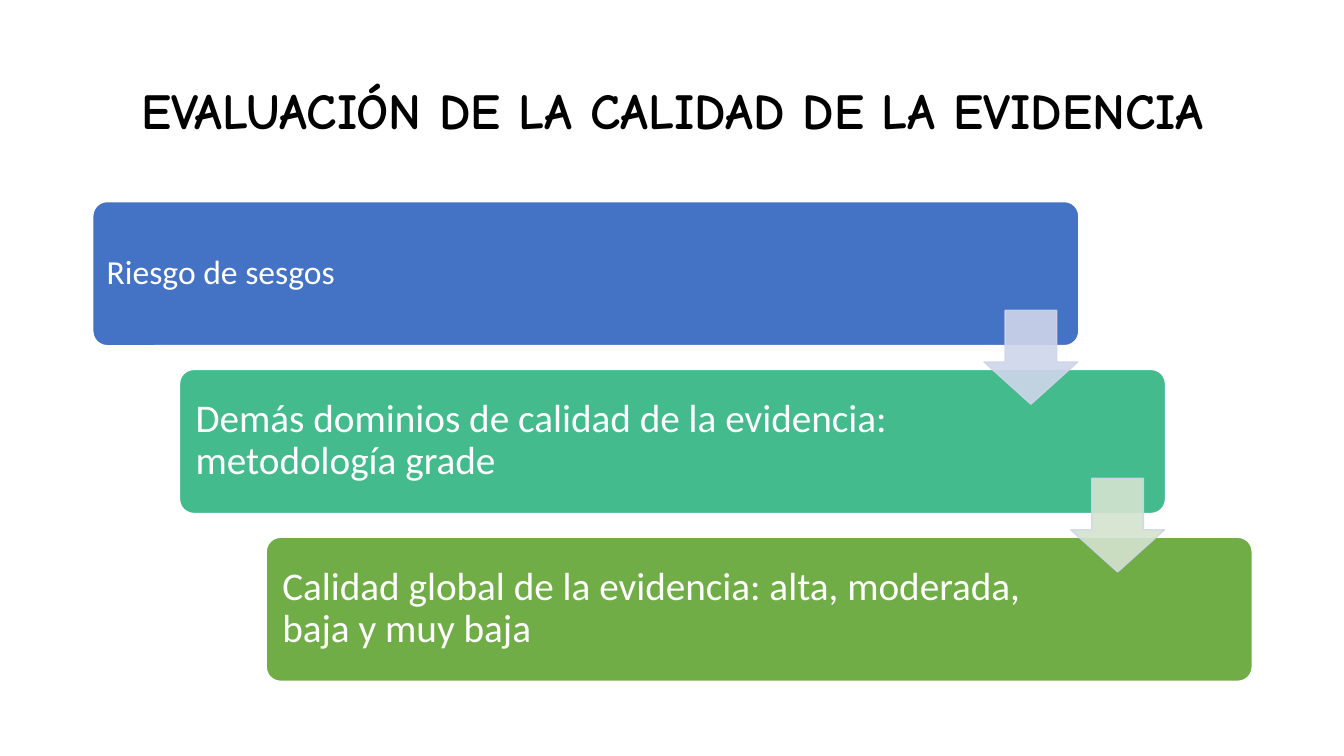
from dataclasses import dataclass

from lxml import etree
from pptx import Presentation
from pptx.dml.color import RGBColor
from pptx.dml.fill import FillFormat
from pptx.enum.shapes import MSO_SHAPE
from pptx.enum.text import MSO_ANCHOR, MSO_AUTO_SIZE, PP_ALIGN
from pptx.oxml.ns import qn
from pptx.shapes.autoshape import Shape
from pptx.shapes.shapetree import GroupShapes
from pptx.text.text import TextFrame
from pptx.util import Inches, Pt

ROUNDED = MSO_SHAPE.ROUNDED_RECTANGLE
DOWN_ARROW = MSO_SHAPE.DOWN_ARROW
MIDDLE = MSO_ANCHOR.MIDDLE
CENTER, LEFT = PP_ALIGN.CENTER, PP_ALIGN.LEFT

COLORS = {
    "black": "000000",
    "white": "FFFFFF",
    "blue": "4472C4",
    "teal": "43BB8D",
    "green": "70AD47",
    "pale_blue": "CFD5EA",
    "pale_green": "D5E3CF",
}

# Staircase grid, in inches
FIRST_LEFT, FIRST_TOP = 0.92, 2.0
COLUMN_STEP, ROW_STEP = 0.86, 3.33 / 2
BOX_WIDTH, BOX_HEIGHT = 9.78, 1.43
TEXT_OFFSET, TEXT_HEIGHT = 0.04, 1.34
ARROW_RIGHT, ARROW_DOWN, ARROW_SIZE = 8.84, 1.08, 0.93
ARROW_OPACITY = 90


@dataclass(frozen=True)
class Step:
    text: str
    color: str
    size: int
    text_width: float
    inset: float


STEPS = [
    Step("Riesgo de sesgos", "blue", 24, 8.23, 0.1),
    Step("Demás dominios de calidad de la evidencia: metodología grade",
         "teal", 28, 7.9, 0.12),
    Step("Calidad global de la evidencia: alta, moderada, baja y muy baja",
         "green", 28, 7.9, 0.12),
]
ARROW_COLORS = ["pale_blue", "pale_green"]


def rgb(name: str) -> RGBColor:
    return RGBColor.from_string(COLORS[name])


def write(frame: TextFrame, text: str, font: str, size: int, color: str,
          alignment: PP_ALIGN, bold: bool = False) -> None:
    frame.text = text
    frame.word_wrap = True
    frame.auto_size = MSO_AUTO_SIZE.NONE
    frame.vertical_anchor = MIDDLE
    paragraph = frame.paragraphs[0]
    paragraph.alignment = alignment
    paragraph.line_spacing = 0.9
    run_font = paragraph.runs[0].font
    run_font.name = font
    run_font.size = Pt(size)
    run_font.bold = bold
    run_font.color.rgb = rgb(color)


def set_opacity(fill: FillFormat, percent: int) -> None:
    color = fill._xPr.find(qn("a:solidFill"))[0]
    etree.SubElement(color, qn("a:alpha")).set("val", str(percent * 1000))


def add_figure(shapes: GroupShapes, kind: MSO_SHAPE, left: float, top: float,
               width: float, height: float, adjustments: list[float],
               fill: str, line: str) -> Shape:
    shape = shapes.add_shape(kind, Inches(left), Inches(top),
                             Inches(width), Inches(height))
    shape.shadow.inherit = False
    for index, value in enumerate(adjustments):
        shape.adjustments[index] = value
    shape.fill.solid()
    shape.fill.fore_color.rgb = rgb(fill)
    shape.line.color.rgb = rgb(line)
    shape.line.width = Pt(1)
    return shape


def add_step(shapes: GroupShapes, step: Step, left: float, top: float) -> None:
    add_figure(shapes, ROUNDED, left, top, BOX_WIDTH, BOX_HEIGHT, [0.1],
               step.color, "white")
    label = shapes.add_textbox(
        Inches(left + TEXT_OFFSET), Inches(top + TEXT_OFFSET),
        Inches(step.text_width), Inches(TEXT_HEIGHT))
    frame = label.text_frame
    frame.margin_left = frame.margin_right = Inches(step.inset)
    frame.margin_top = frame.margin_bottom = Inches(step.inset)
    write(frame, step.text, "Calibri", step.size, "white", LEFT)


def add_arrow(shapes: GroupShapes, color: str, left: float, top: float) -> None:
    arrow = add_figure(shapes, DOWN_ARROW, left + ARROW_RIGHT, top + ARROW_DOWN,
                       ARROW_SIZE, ARROW_SIZE, [0.55, 0.45], color, "pale_blue")
    set_opacity(arrow.fill, ARROW_OPACITY)
    set_opacity(arrow.line.fill, ARROW_OPACITY)


def main() -> None:
    presentation = Presentation()
    presentation.slide_width = Inches(13.33)
    presentation.slide_height = Inches(7.5)
    slide = presentation.slides.add_slide(presentation.slide_layouts[5])

    # Title
    title = slide.shapes.title
    title.left, title.top = Inches(0.92), Inches(0.4)
    title.width, title.height = Inches(11.5), Inches(1.45)
    write(title.text_frame, "EVALUACIÓN DE LA CALIDAD DE LA EVIDENCIA",
          "Comic Neue", 36, "black", CENTER, bold=True)

    # Descending steps, then the arrows on top of them
    staircase = slide.shapes.add_group_shape().shapes
    corners = [(FIRST_LEFT + i * COLUMN_STEP, FIRST_TOP + i * ROW_STEP)
               for i in range(len(STEPS))]
    for step, (left, top) in zip(STEPS, corners):
        add_step(staircase, step, left, top)
    for color, (left, top) in zip(ARROW_COLORS, corners):
        add_arrow(staircase, color, left, top)

    presentation.save("out.pptx")


if __name__ == "__main__":
    main()
